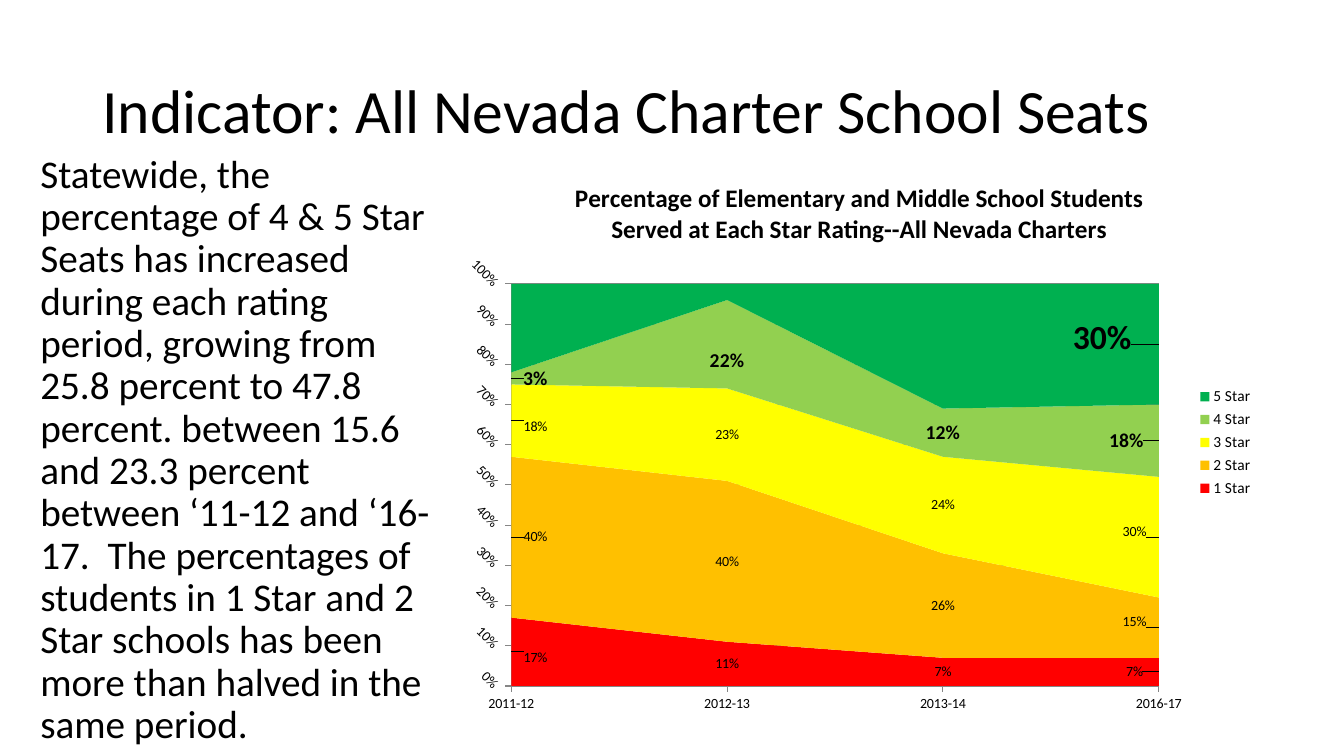
"""Build the slide on Nevada charter school seats by star rating."""
import dataclasses
import typing

import lxml.etree
import pptx
import pptx.chart.data
import pptx.dml.color
import pptx.enum.chart
import pptx.enum.text
import pptx.oxml
import pptx.oxml.ns
import pptx.util

Pt = pptx.util.Pt
FONT = "Calibri"
COLORS = {
    "text": "000000",
    "axis": "868686",
    "1 Star": "FF0000",
    "2 Star": "FFC000",
    "3 Star": "FFFF00",
    "4 Star": "92D050",
    "5 Star": "00B050",
}
YEARS = ("2011-12", "2012-13", "2013-14", "2016-17")


@dataclasses.dataclass(frozen=True)
class Rating:
    """A star rating: yearly shares, label format, label shifts and hidden labels."""
    name: str
    shares: tuple[float, ...]
    shifts: dict[int, tuple[float, float]]
    size: float = 10
    bold: bool = False
    hidden: tuple[int, ...] = ()


RATINGS = (
    Rating("1 Star", (0.17, 0.11, 0.07, 0.07), {0: (0.03, 0.01), 3: (-0.03, 0)}),
    Rating("2 Star", (0.4, 0.4, 0.26, 0.15), {0: (0.03, 0), 3: (-0.03, -0.01)}),
    Rating("3 Star", (0.18, 0.23, 0.24, 0.3), {0: (0.03, 0.01), 3: (-0.03, -0.01)}),
    Rating("4 Star", (0.03, 0.22, 0.12, 0.18),
           {0: (0.03, 0), 1: (0, 0.03), 3: (-0.04, 0)}, 14, True),
    Rating("5 Star", (0.23, 0.05, 0.31, 0.3),
           {0: (0.06, 0), 3: (-0.07, -0.01)}, 24, True, (1, 2)),
)


def rgb(key: str) -> pptx.dml.color.RGBColor:
    """Return the named colour."""
    return pptx.dml.color.RGBColor.from_string(COLORS[key])


def set_font(font: typing.Any, size: float, bold: bool = False) -> None:
    """Format a font in the slide's typeface and text colour."""
    font.name, font.size, font.bold = FONT, Pt(size), bold
    font.color.rgb = rgb("text")


def write(tf: typing.Any, text: str, *, size: float, bold: bool = False,
          align: typing.Any = None, spacing: typing.Optional[float] = None,
          before: float = 0) -> None:
    """Write one formatted paragraph into a text frame."""
    p = tf.paragraphs[0]
    p.alignment, p.line_spacing, p.space_before = align, spacing, Pt(before)
    r = p.add_run()
    r.text = text
    set_font(r.font, size, bold)


def place(sp: typing.Any, left: float, top: float, width: float, height: float,
          anchor: typing.Any) -> typing.Any:
    """Position a placeholder and return its text frame."""
    sp.left, sp.top, sp.width, sp.height = map(Pt, (left, top, width, height))
    tf = sp.text_frame
    tf.word_wrap, tf.vertical_anchor = True, anchor
    tf.auto_size = pptx.enum.text.MSO_AUTO_SIZE.NONE
    return tf


def manual_layout(tag_values: dict[str, typing.Any]) -> typing.Any:
    """Build a manual chart layout element."""
    qn = pptx.oxml.ns.qn
    layout = pptx.oxml.parse_xml(f"<c:layout {pptx.oxml.ns.nsdecls('c')}/>")
    manual = lxml.etree.SubElement(layout, qn("c:manualLayout"))
    for tag, value in tag_values.items():
        lxml.etree.SubElement(manual, qn(f"c:{tag}")).set("val", str(value))
    return layout


def format_rating(series: typing.Any, rating: Rating) -> None:
    """Colour one band and set its labels."""
    series.format.fill.solid()
    series.format.fill.fore_color.rgb = rgb(rating.name)
    labels = series.data_labels
    labels.show_value = True
    labels.number_format, labels.number_format_is_linked = "0%", False
    set_font(labels.font, rating.size, rating.bold)
    for i in (*rating.shifts, *rating.hidden):
        set_font(series.points[i].data_label.font, rating.size, rating.bold)
        label = series._element.xpath(f".//c:dLbl[c:idx/@val='{i}']")[0]
        if i in rating.hidden:
            label.xpath("c:showVal")[0].set("val", "0")
        else:
            label.insert(1, manual_layout(dict(zip("xy", rating.shifts[i]))))


def format_axis(axis: typing.Any) -> None:
    """Set the ticks, line and labels of an axis."""
    axis.major_tick_mark = pptx.enum.chart.XL_TICK_MARK.OUTSIDE
    axis.minor_tick_mark = pptx.enum.chart.XL_TICK_MARK.NONE
    axis.format.line.color.rgb = rgb("axis")
    axis.format.line.width = Pt(0.75)
    set_font(axis.tick_labels.font, 10)


def add_seats_chart(s: typing.Any) -> None:
    """Add the stacked area chart of seats by rating."""
    data = pptx.chart.data.CategoryChartData(number_format="0%")
    data.categories = YEARS
    for rating in RATINGS:
        data.add_series(rating.name, rating.shares)
    chart = s.shapes.add_chart(
        pptx.enum.chart.XL_CHART_TYPE.AREA_STACKED,
        Pt(324.7), Pt(113.8), Pt(578.2), Pt(404.6), data).chart
    set_font(chart.font, 10)
    chart.has_title = True
    write(chart.chart_title.text_frame,
          "Percentage of Elementary and Middle School Students "
          "Served at Each Star Rating--All Nevada Charters", size=18, bold=True)
    chart.chart_title.include_in_layout = False
    chart.has_legend = True
    chart.legend.position = pptx.enum.chart.XL_LEGEND_POSITION.RIGHT
    chart.legend.include_in_layout = False
    set_font(chart.legend.font, 11)

    for series, rating in zip(chart.plots[0].series, RATINGS):
        format_rating(series, rating)
    for axis in (chart.category_axis, chart.value_axis):
        format_axis(axis)
    axis = chart.value_axis
    axis.minimum_scale, axis.maximum_scale, axis.major_unit = 0, 1, 0.1
    axis.has_major_gridlines = True
    axis.major_gridlines.format.line.color.rgb = rgb("axis")
    axis.tick_labels.number_format = "0%"
    axis.tick_labels.number_format_is_linked = False
    axis._element.xpath("c:txPr/a:bodyPr")[0].set("rot", "2700000")
    axis._element.xpath("c:crossBetween")[0].set("val", "midCat")

    area = chart._chartSpace.xpath(".//c:plotArea")[0]
    for old in area.xpath("c:layout"):
        area.remove(old)
    area.insert(0, manual_layout({
        "layoutTarget": "inner", "xMode": "edge", "yMode": "edge",
        "x": 0.07, "y": 0.22, "w": 0.8, "h": 0.71}))


def main() -> None:
    """Build and save the presentation."""
    prs = pptx.Presentation()
    prs.slide_width, prs.slide_height = Pt(960), Pt(540)
    s = prs.slides.add_slide(prs.slide_layouts[1])
    left = pptx.enum.text.PP_ALIGN.LEFT
    anchor = pptx.enum.text.MSO_ANCHOR
    tf = place(s.shapes.title, 66, 28.8, 828, 104.4, anchor.MIDDLE)
    write(tf, "Indicator: All Nevada Charter School Seats",
          size=44, align=left, spacing=0.9)
    tf = place(s.placeholders[1], 21.6, 106.6, 303.1, 453.6, anchor.TOP)
    write(tf, "Statewide, the percentage of 4 & 5 Star Seats has increased during "
          "each rating period, growing from 25.8 percent to 47.8 percent. between "
          "15.6 and 23.3 percent between ‘11-12 and ‘16-17.  The percentages of "
          "students in 1 Star and 2 Star schools has been more than halved in the "
          "same period.", size=28, align=left, spacing=0.9, before=10)
    pPr = tf.paragraphs[0]._p.get_or_add_pPr()
    pPr.set("marL", "0")
    pPr.set("indent", "0")
    lxml.etree.SubElement(pPr, pptx.oxml.ns.qn("a:buNone"))
    add_seats_chart(s)
    prs.save("out.pptx")


if __name__ == "__main__":
    main()
